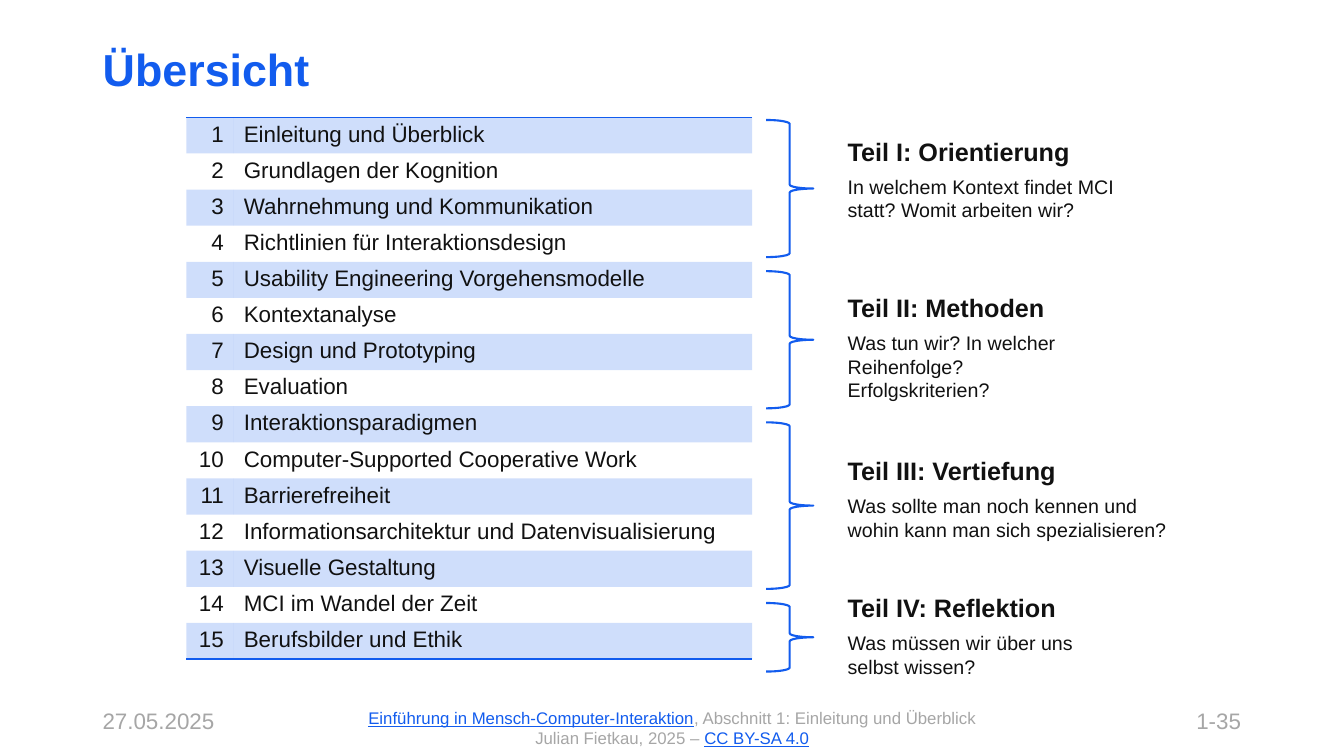
from pptx import Presentation
from pptx.dml.color import RGBColor
from pptx.enum.shapes import MSO_SHAPE
from pptx.enum.text import MSO_ANCHOR, PP_ALIGN
from pptx.oxml import parse_xml
from pptx.oxml.ns import nsdecls, qn
from pptx.util import Pt
from lxml.etree import SubElement

BLUE = RGBColor(0x12, 0x5C, 0xEE)
DARK = RGBColor(0x11, 0x11, 0x11)
GREY = RGBColor(0xA6, 0xA6, 0xA6)
PLAIN_TABLE_STYLE = "{2D5ABB26-0587-4C30-8999-92F81FD0307C}"

TOPICS = [
    "Einleitung und Überblick",
    "Grundlagen der Kognition",
    "Wahrnehmung und Kommunikation",
    "Richtlinien für Interaktionsdesign",
    "Usability Engineering Vorgehensmodelle",
    "Kontextanalyse",
    "Design und Prototyping",
    "Evaluation",
    "Interaktionsparadigmen",
    "Computer-Supported Cooperative Work",
    "Barrierefreiheit",
    "Informationsarchitektur und Datenvisualisierung",
    "Visuelle Gestaltung",
    "MCI im Wandel der Zeit",
    "Berufsbilder und Ethik",
]

SECTIONS = [
    ("Teil I: Orientierung", "In welchem Kontext findet MCI statt? Womit arbeiten wir?", 94.3, 205, 98),
    ("Teil II: Methoden", "Was tun wir? In welcher Reihenfolge? Erfolgskriterien?", 205.9, 193, 98),
    ("Teil III: Vertiefung", "Was sollte man noch kennen und wohin kann man sich spezialisieren?", 322.6, 237, 119),
    ("Teil IV: Reflektion", "Was müssen wir über uns selbst wissen?", 420.5, 193, 49),
]
BRACE_TOP = 85.7
BRACE_GAP = 10


class OverviewSlide:
    font = "Arial"

    def __init__(self, presentation):
        self.slide = presentation.slides.add_slide(presentation.slide_layouts[5])

    def format_run(self, run, size, color, bold=False, underline=False):
        run.font.name = self.font
        run.font.size = Pt(size)
        run.font.color.rgb = color
        run.font.bold = bold
        run.font.underline = underline

    def title(self, text, left, top, width, height):
        shape = self.slide.shapes.title
        shape.left, shape.top = Pt(left), Pt(top)
        shape.width, shape.height = Pt(width), Pt(height)
        shape.text_frame.text = text
        shape.text_frame.vertical_anchor = MSO_ANCHOR.MIDDLE
        paragraph = shape.text_frame.paragraphs[0]
        paragraph.alignment = PP_ALIGN.LEFT
        paragraph.line_spacing = 0.9
        self.format_run(paragraph.runs[0], 32, BLUE, bold=True)

    def text_box(self, left, top, width, height):
        shape = self.slide.shapes.add_textbox(Pt(left), Pt(top), Pt(width), Pt(height))
        shape.text_frame.word_wrap = True
        return shape.text_frame

    def label(self, text, left, top, width, height, alignment):
        text_frame = self.text_box(left, top, width, height)
        text_frame.text = text
        paragraph = text_frame.paragraphs[0]
        paragraph.alignment = alignment
        self.format_run(paragraph.runs[0], 16, GREY)

    def footer(self, lines, left, top, width, height):
        text_frame = self.text_box(left, top, width, height)
        for index, pieces in enumerate(lines):
            paragraph = text_frame.add_paragraph() if index else text_frame.paragraphs[0]
            paragraph.alignment = PP_ALIGN.CENTER
            for text, is_link in pieces:
                run = paragraph.add_run()
                run.text = text
                self.format_run(run, 12, BLUE if is_link else GREY, underline=is_link)

    def section(self, heading, question, left, top, width, height):
        text_frame = self.text_box(left, top, width, height)
        text_frame.margin_left = text_frame.margin_right = Pt(2.9)
        text_frame.margin_top = text_frame.margin_bottom = Pt(2.9)
        text_frame.text = f"{heading}\n{question}"
        for paragraph, size, bold in zip(text_frame.paragraphs, (18, 14), (True, False)):
            paragraph.space_after = Pt(6)
            self.format_run(paragraph.runs[0], size, DARK, bold=bold)

    def brace(self, left, top, width, height):
        shape = self.slide.shapes.add_shape(
            MSO_SHAPE.RIGHT_BRACE, Pt(left), Pt(top), Pt(width), Pt(height))
        shape.shadow.inherit = False
        shape.fill.background()
        shape.line.color.rgb = BLUE
        shape.line.width = Pt(1.5)

    def topic_table(self, topics, left, top, column_widths, row_height):
        frame = self.slide.shapes.add_table(
            len(topics), 2, Pt(left), Pt(top), Pt(sum(column_widths)), Pt(row_height * len(topics)))
        table = frame.table
        table.first_row = table.horz_banding = False
        table._tbl.tblPr.find(qn("a:tableStyleId")).text = PLAIN_TABLE_STYLE
        for column, width in zip(table.columns, column_widths):
            column.width = Pt(width)
        for index, topic in enumerate(topics):
            table.rows[index].height = Pt(row_height)
            number_cell, topic_cell = table.cell(index, 0), table.cell(index, 1)
            self.fill_cell(number_cell, str(index + 1), PP_ALIGN.RIGHT, index % 2 == 0)
            self.fill_cell(topic_cell, topic, PP_ALIGN.LEFT, index % 2 == 0)
        for column in range(2):
            self.cell_border(table.cell(0, column), "lnT")
            self.cell_border(table.cell(len(topics) - 1, column), "lnB")

    def fill_cell(self, cell, text, alignment, shaded):
        cell.margin_top = cell.margin_bottom = Pt(3.3)
        cell.text_frame.text = text
        paragraph = cell.text_frame.paragraphs[0]
        paragraph.alignment = alignment
        self.format_run(paragraph.runs[0], 16, DARK)
        if shaded:
            cell.fill.solid()
            cell.fill.fore_color.rgb = BLUE
            color = cell._tc.tcPr.find(".//" + qn("a:srgbClr"))
            SubElement(color, qn("a:alpha")).set("val", "20000")
        else:
            cell.fill.background()

    def cell_border(self, cell, side):
        border = parse_xml(
            f'<a:{side} {nsdecls("a")} w="{Pt(1)}"><a:solidFill>'
            f'<a:srgbClr val="{BLUE}"/></a:solidFill></a:{side}>')
        cell._tc.tcPr.insert(0, border)


def main():
    presentation = Presentation()
    presentation.slide_width, presentation.slide_height = Pt(960), Pt(540)
    overview = OverviewSlide(presentation)
    overview.footer(
        [
            [("Einführung in Mensch-Computer-Interaktion", True),
             (", Abschnitt 1: Einleitung und Überblick", False)],
            [("Julian Fietkau, 2025 – ", False), ("CC BY-SA 4.0", True)],
        ],
        191.5, 501.8, 577.4, 36)
    overview.label("27.05.2025", 66.2, 501.8, 125.3, 26.6, PP_ALIGN.LEFT)
    overview.label("1-35", 655.2, 501.8, 238.3, 26.6, PP_ALIGN.RIGHT)
    overview.title("Übersicht", 66.2, 26.6, 828, 49)
    overview.topic_table(TOPICS, 133.2, 83.8, (33.8, 370.2), 25)
    brace_top = BRACE_TOP
    for heading, question, text_top, text_width, brace_height in SECTIONS:
        overview.brace(547.2, brace_top, 33.8, brace_height)
        overview.section(heading, question, 602.6, text_top, text_width, 74)
        brace_top += brace_height + BRACE_GAP
    presentation.save("out.pptx")


if __name__ == "__main__":
    main()
